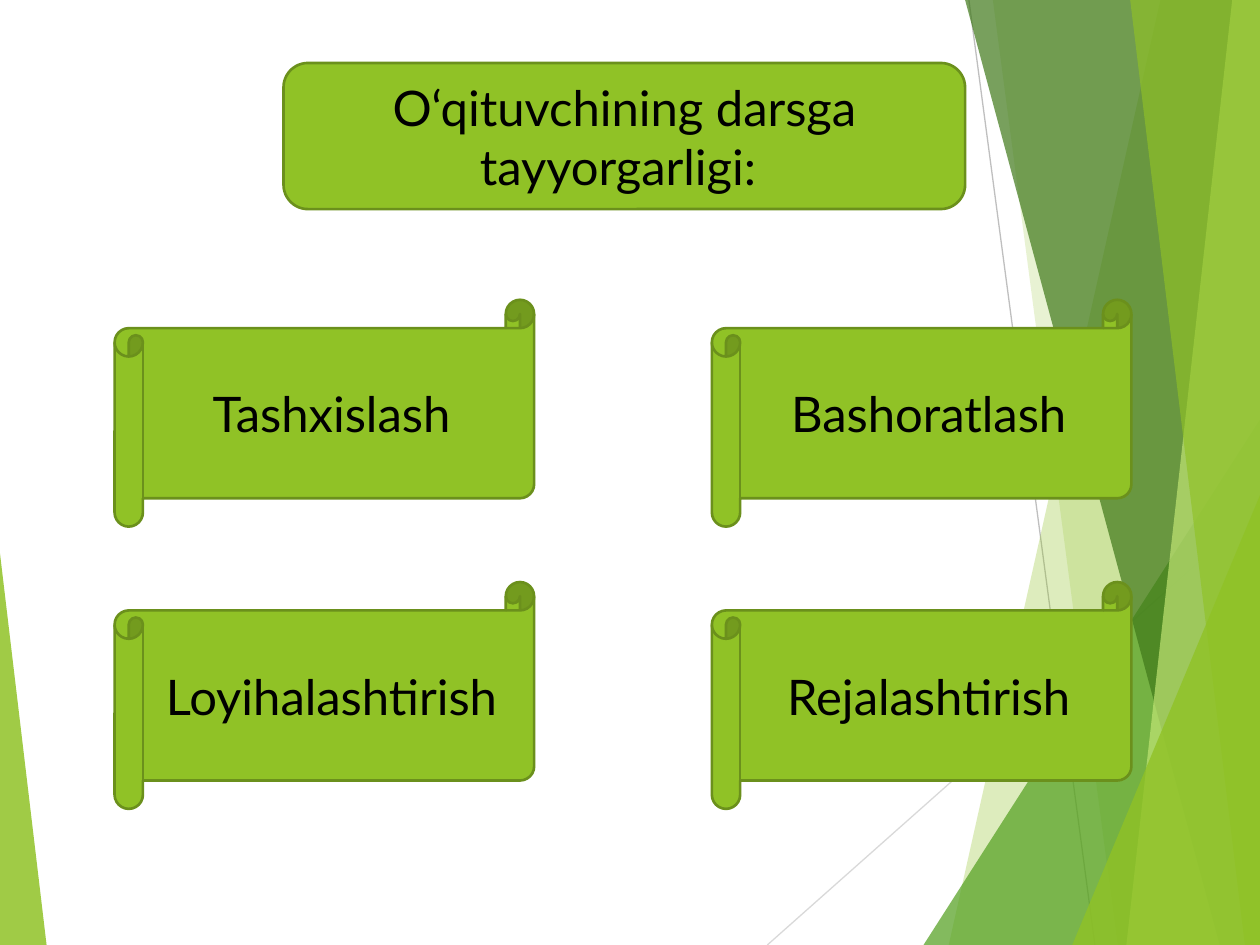
import pptx
import pptx.util
import pptx.dml.color
import pptx.enum.shapes
import pptx.enum.text
import pptx.oxml
import pptx.oxml.ns

WIDTH, HEIGHT = 10, 7.5
GREEN, EDGE, BLACK = "90C226", "6B901C", "000000"
SHAPES = pptx.enum.shapes.MSO_SHAPE

# Content
TITLE = "O‘qituvchining darsga tayyorgarligi: "
STEPS = [["Tashxislash", "Bashoratlash"],
         ["Loyihalashtirish", "Rejalashtirish"]]

# Background: thin lines as (start, end, colour)
RAYS = [((7.69, 0), (8.69, HEIGHT), "BFBFBF"),
        ((WIDTH, 4.03), (6.09, HEIGHT), "D9D9D9")]
# Bands reach the right edge: (kind, top x, bottom x, colour, opacity %)
# Triangles stand on the bottom edge: (kind, box, apex share, colour, opacity %)
FACETS = [("band", 9.21, 7.53, GREEN, 30),
          ("band", 7.88, 8.87, GREEN, 20),
          ("triangle", (7.33, 3.33, 2.67), 1, "54A021", 72),
          ("band", 7.66, 9.68, "3F7819", 70),
          ("band", 9.78, 8.94, "C0E474", 70),
          ("band", 8.97, 9.88, GREEN, 65),
          ("triangle", (8.51, 3.93, 1.49), 1, GREEN, 80),
          ("triangle", (0, 4.39, 0.37), 0, GREEN, 85)]

# Grid of scrolls
GRID_LEFT, GRID_TOP = 0.91, 2.38
COLUMN_STEP, ROW_STEP = 4.74, 2.24
SCROLL_SIZE = (3.33, 1.8)


def inches(*values):
    return [pptx.util.Inches(value) for value in values]


def color(code):
    return pptx.dml.color.RGBColor.from_string(code)


def add_child(parent, tag, **attributes):
    child = pptx.oxml.parse_xml(f"<a:{tag} {pptx.oxml.ns.nsdecls('a')}/>")
    for name, value in attributes.items():
        child.set(name, str(value))
    parent.append(child)


def paint(shape, code, opacity=100):
    shape.shadow.inherit = False
    shape.fill.solid()
    shape.fill.fore_color.rgb = color(code)
    if opacity < 100:
        fill = shape.element.spPr.find(pptx.oxml.ns.qn("a:solidFill"))
        add_child(fill[0], "alpha", val=opacity * 1000)


def add_ray(page, start, end, code):
    ray = page.shapes.add_connector(
        pptx.enum.shapes.MSO_CONNECTOR.STRAIGHT, *inches(*start, *end))
    ray.line.color.rgb = color(code)
    ray.line.width = pptx.util.Pt(0.75)
    add_child(ray.element.spPr, "effectLst")


def add_band(page, top_x, bottom_x):
    corners = [(WIDTH, 0), (WIDTH, HEIGHT), (bottom_x, HEIGHT)]
    builder = page.shapes.build_freeform(*inches(top_x, 0), scale=1.0)
    builder.add_line_segments([inches(*corner) for corner in corners], close=True)
    return builder.convert_to_shape()


def add_triangle(page, box, apex):
    left, top, width = box
    shape = page.shapes.add_shape(
        SHAPES.ISOSCELES_TRIANGLE, *inches(left, top, width, HEIGHT - top))
    shape.adjustments[0] = apex
    return shape


def add_label(page, kind, box, text):
    shape = page.shapes.add_shape(kind, *inches(*box))
    paint(shape, GREEN)
    shape.line.color.rgb = color(EDGE)
    shape.line.width = pptx.util.Pt(1.5)
    frame = shape.text_frame
    frame.word_wrap = True
    frame.vertical_anchor = pptx.enum.text.MSO_ANCHOR.MIDDLE
    para = frame.paragraphs[0]
    para.alignment = pptx.enum.text.PP_ALIGN.CENTER
    span = para.add_run()
    span.text = text
    for name, value in {"name": "Lato", "size": pptx.util.Pt(28)}.items():
        setattr(span.font, name, value)
    span.font.color.rgb = color(BLACK)


def main():
    deck = pptx.Presentation()
    deck.slide_width, deck.slide_height = inches(WIDTH, HEIGHT)
    page = deck.slides.add_slide(deck.slide_layouts[6])

    # Background
    for ray in RAYS:
        add_ray(page, *ray)
    makers = {"band": add_band, "triangle": add_triangle}
    for kind, first, second, code, opacity in FACETS:
        facet = makers[kind](page, first, second)
        paint(facet, code, opacity)
        facet.line.fill.background()

    # Title and scrolls
    add_label(page, SHAPES.ROUNDED_RECTANGLE, (2.25, 0.5, 5.41, 1.16), TITLE)
    for row, names in enumerate(STEPS):
        for column, name in enumerate(names):
            corner = (GRID_LEFT + column * COLUMN_STEP, GRID_TOP + row * ROW_STEP)
            add_label(page, SHAPES.HORIZONTAL_SCROLL, corner + SCROLL_SIZE, name)

    deck.save("out.pptx")


if __name__ == "__main__":
    main()
